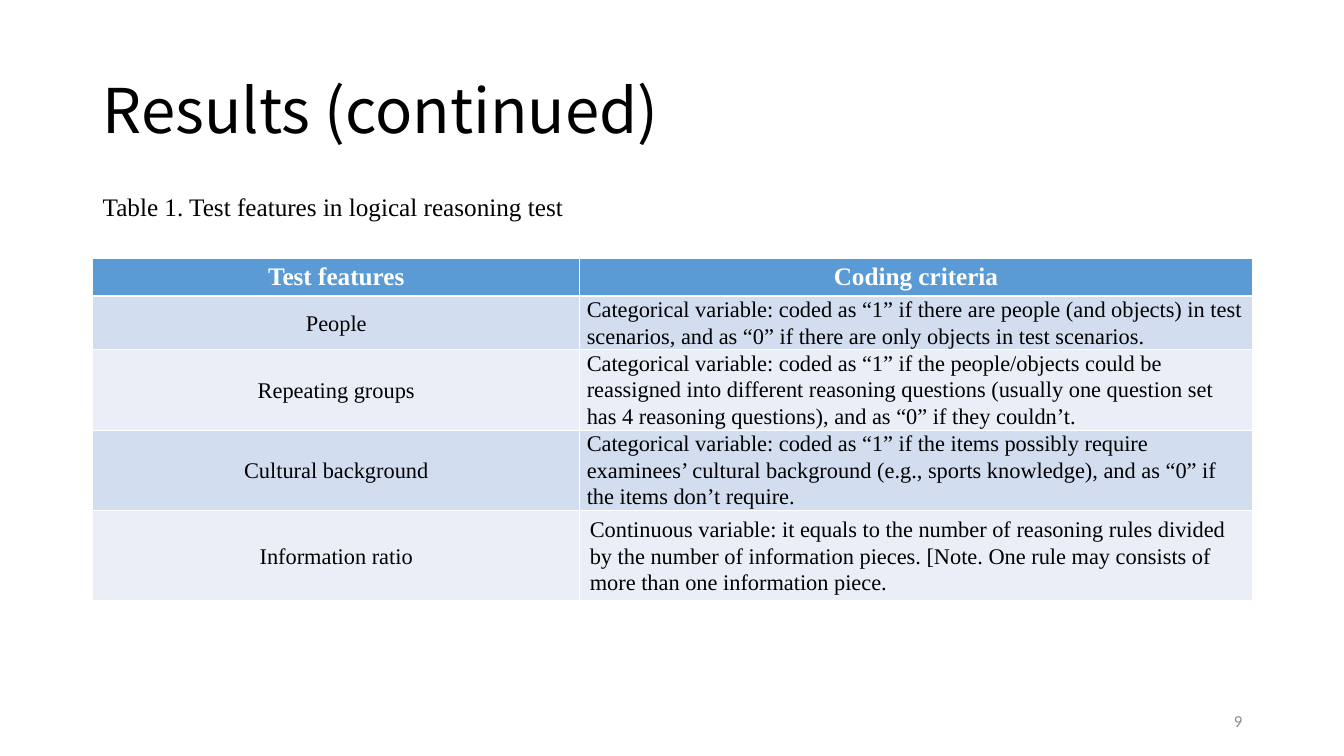
from pptx import Presentation
from pptx.dml.color import RGBColor
from pptx.enum.text import MSO_ANCHOR as Anchor, MSO_AUTO_SIZE as Fit, PP_ALIGN as Align
from pptx.util import Inches, Pt

WIDE, HIGH = 13.33, 7.5
LEFT, SPAN = 0.92, 11.5
SERIF = "Times New Roman"
HEAD = ("Test features", "Coding criteria")
ROWS = [
    ("People", "Categorical variable: coded as “1” if there are people (and objects) "
     "in test scenarios, and as “0” if there are only objects in test scenarios."),
    ("Repeating groups", "Categorical variable: coded as “1” if the people/objects could be "
     "reassigned into different reasoning questions (usually one question set has 4 "
     "reasoning questions), and as “0” if they couldn’t."),
    ("Cultural background", "Categorical variable: coded as “1” if the items possibly require "
     "examinees’ cultural background (e.g., sports knowledge), and as “0” if the items "
     "don’t require."),
    ("Information ratio", "Continuous variable: it equals to the number of reasoning rules "
     "divided by the number of information pieces. [Note. One rule may consists of more "
     "than one information piece."),
]
HEIGHTS = (0.37, 0.53, 0.8, 0.8, 0.89)
SHARES = (0.42, 0.58)
BANDS = ("D2DEEF", "EAEFF7")


def color(code):
    return RGBColor.from_string(code)


def write(frame, text, size, font=SERIF, ink="000000", bold=False,
          align=Align.LEFT, gap=1.0):
    frame.text = text
    para = frame.paragraphs[0]
    para.alignment, para.line_spacing = align, gap
    face = para.runs[0].font
    for key, value in {"size": Pt(size), "name": font, "bold": bold}.items():
        setattr(face, key, value)
    face.color.rgb = color(ink)


def set_title(slide, box, text):
    title = slide.shapes.title
    title.left, title.top, title.width, title.height = map(Inches, box)
    frame = title.text_frame
    frame.word_wrap, frame.auto_size = True, Fit.NONE
    frame.vertical_anchor = Anchor.MIDDLE
    write(frame, text, 44, "Noto Sans CJK KR", gap=0.9)


def add_label(slide, box, text, size, anchor=Anchor.TOP, **style):
    frame = slide.shapes.add_textbox(*map(Inches, box)).text_frame
    frame.word_wrap, frame.vertical_anchor = True, anchor
    write(frame, text, size, **style)


def fill_cell(cell, text, shade, tight, **style):
    cell.fill.solid()
    cell.fill.fore_color.rgb = color(shade)
    if tight:
        cell.margin_left = cell.margin_right = Inches(0.07)
        cell.margin_top = cell.margin_bottom = 0
    write(cell.text_frame, text, **style)


def add_features(slide, box):
    shape = slide.shapes.add_table(len(HEIGHTS), len(SHARES), *map(Inches, box))
    table = shape.table
    for col, share in zip(table.columns, SHARES):
        col.width = Inches(box[2] * share)
    for row, height in zip(table.rows, HEIGHTS):
        row.height = Inches(height)
    for c, text in enumerate(HEAD):
        fill_cell(table.cell(0, c), text, "5B9BD5", False, size=18,
                  ink="FFFFFF", bold=True, align=Align.CENTER)
    for r, pair in enumerate(ROWS, 1):
        for c, text in enumerate(pair):
            cell = table.cell(r, c)
            fill_cell(cell, text, BANDS[(r - 1) % 2], r < len(ROWS), size=16,
                      gap=1.07, align=Align.LEFT if c else Align.CENTER)
            cell.vertical_anchor = Anchor.TOP if c else Anchor.MIDDLE


def main():
    deck = Presentation()
    deck.slide_width, deck.slide_height = Inches(WIDE), Inches(HIGH)
    slide = deck.slides.add_slide(deck.slide_layouts[5])
    set_title(slide, (LEFT, 0.4, SPAN, 1.45), "Results (continued)")
    add_features(slide, (LEFT, 2.56, SPAN, sum(HEIGHTS)))
    add_label(slide, (LEFT, 1.85, 5, 0.4),
              "Table 1. Test features in logical reasoning test", 18)
    add_label(slide, (LEFT + SPAN - 3, 6.95, 3, 0.4), "9", 12, Anchor.MIDDLE,
              font="Calibri", ink="8C8C8C", align=Align.RIGHT)
    deck.save("out.pptx")


if __name__ == "__main__":
    main()
